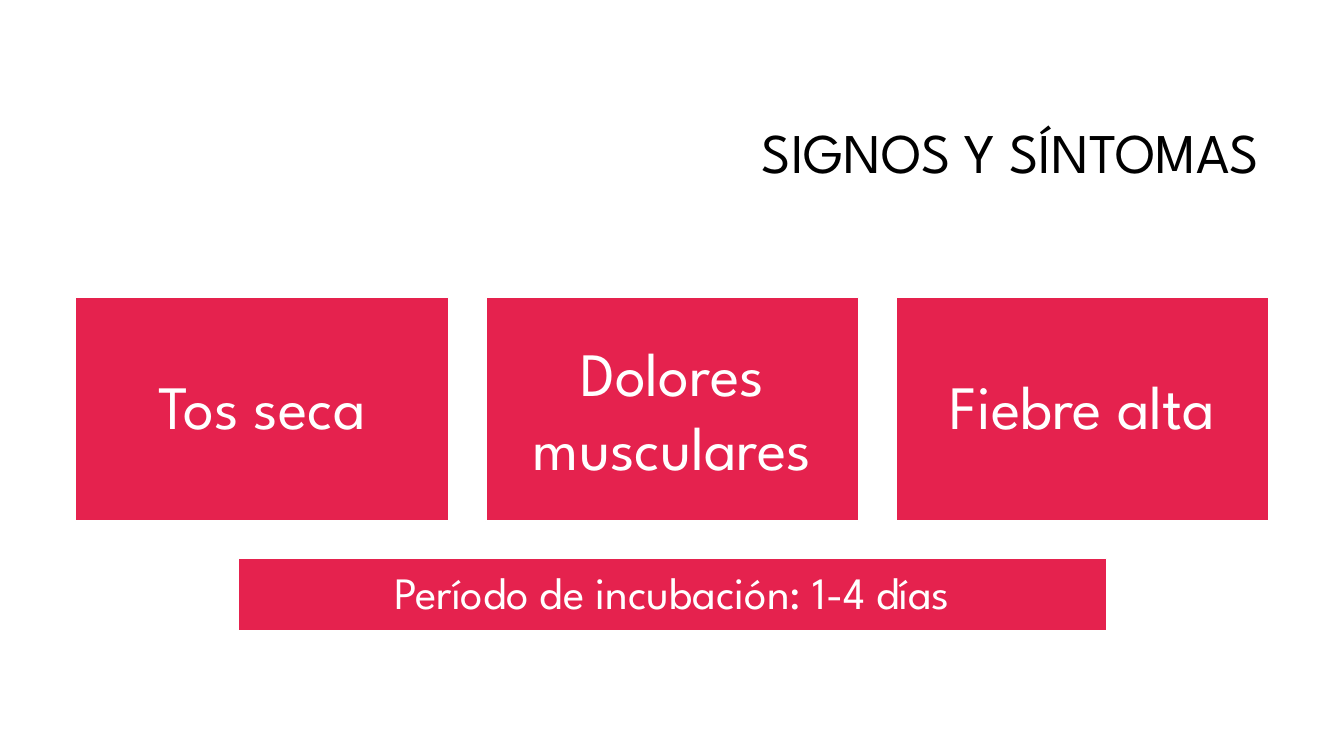
from dataclasses import dataclass

from pptx import Presentation
from pptx.dml.color import RGBColor
from pptx.enum.shapes import MSO_SHAPE as Shape
from pptx.enum.text import MSO_ANCHOR as Anchor, MSO_AUTO_SIZE as Fit, PP_ALIGN as Align
from pptx.slide import Slide
from pptx.text.text import TextFrame
from pptx.util import Pt

FONT = "League Spartan"
RED, WHITE, BLACK = "E5224E", "FFFFFF", "000000"


@dataclass
class Box:
    text: str
    left: float
    top: float
    width: float
    height: float
    size: float = 44
    inset: float = 13
    spacing: float = 0.9


def color(code: str) -> RGBColor:
    return RGBColor.from_string(code)


def write(frame: TextFrame, text: str, *, size: float, ink: str = WHITE,
          align: Align = Align.CENTER, spacing: float = 0.9) -> None:
    frame.word_wrap = True
    frame.auto_size = Fit.NONE
    frame.vertical_anchor = Anchor.MIDDLE
    line = frame.paragraphs[0]
    line.alignment = align
    line.line_spacing = spacing
    run = line.add_run()
    run.text = text
    run.font.name = FONT
    run.font.size = Pt(size)
    run.font.color.rgb = color(ink)


def draw(slide: Slide, box: Box) -> None:
    rect = slide.shapes.add_shape(Shape.RECTANGLE, Pt(box.left), Pt(box.top),
                                  Pt(box.width), Pt(box.height))
    rect.shadow.inherit = False
    rect.fill.solid()
    rect.fill.fore_color.rgb = color(RED)
    rect.line.color.rgb = color(WHITE)
    rect.line.width = Pt(1)
    frame = rect.text_frame
    frame.margin_left = frame.margin_right = Pt(box.inset)
    frame.margin_top = frame.margin_bottom = Pt(box.inset)
    write(frame, box.text, size=box.size, spacing=box.spacing)


def main() -> None:
    deck = Presentation()
    deck.slide_width, deck.slide_height = Pt(960), Pt(540)
    slide = deck.slides.add_slide(deck.slide_layouts[5])
    slide.background.fill.solid()
    slide.background.fill.fore_color.rgb = color(WHITE)

    title = slide.shapes.title
    title.left, title.top = Pt(228.24), Pt(60.5)
    title.width, title.height = Pt(678.24), Pt(101.5)
    write(title.text_frame, "SIGNOS Y SÍNTOMAS", size=40, ink=BLACK, align=Align.RIGHT)

    left, width, gap = 54, 266.4, 26.64
    signs = [("Tos seca", 0.9), ("Dolores musculares", 1.0), ("Fiebre alta", 0.9)]
    for i, (text, spacing) in enumerate(signs):
        draw(slide, Box(text, left + i * (width + gap), 212.4, width, 159.84,
                        spacing=spacing))
    draw(slide, Box("Período de incubación: 1-4 días", 169.92, 398.88, 620.64, 51.84,
                    size=32, inset=9.6))

    deck.save("out.pptx")


if __name__ == "__main__":
    main()
